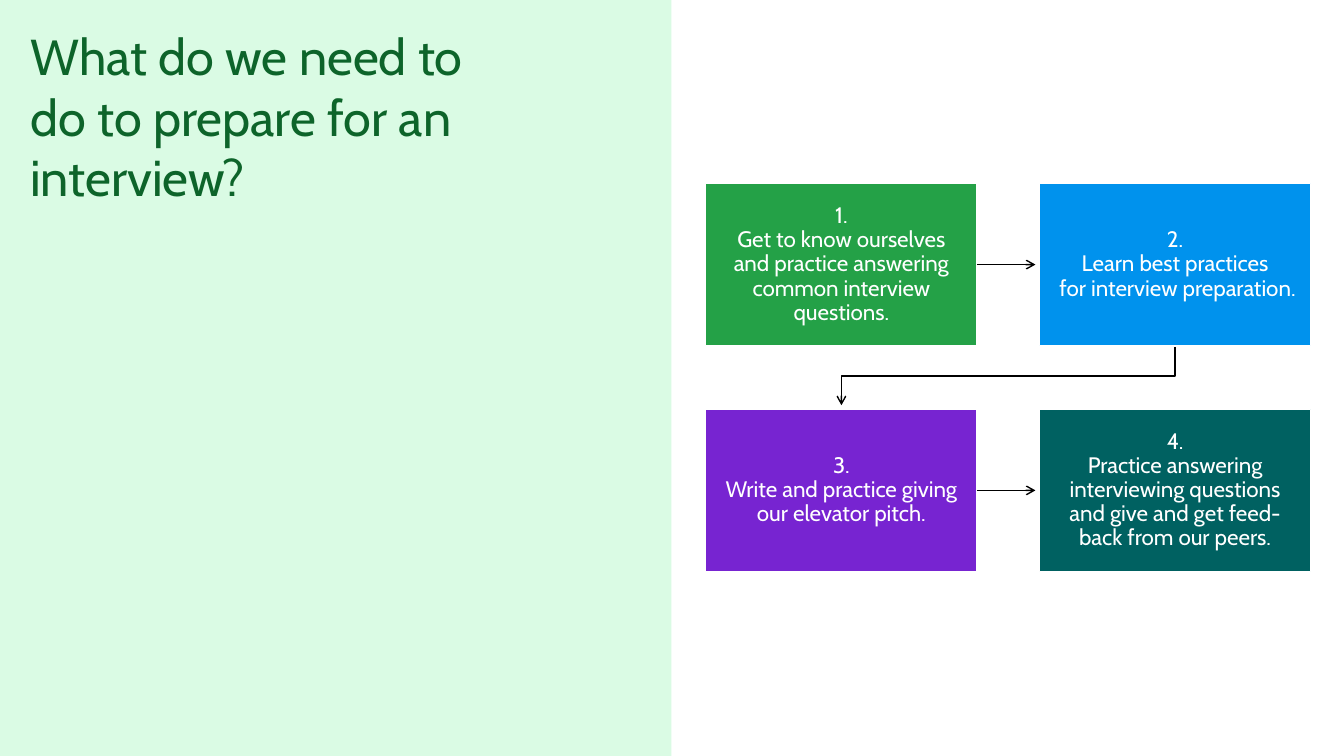
from dataclasses import dataclass

from lxml.etree import SubElement
from pptx import Presentation
from pptx.dml.color import RGBColor
from pptx.enum.shapes import MSO_CONNECTOR as Connector, MSO_SHAPE as Shape
from pptx.enum.text import MSO_ANCHOR as Anchor, MSO_AUTO_SIZE as AutoSize, PP_ALIGN as Align
from pptx.oxml.ns import qn
from pptx.util import Emu, Pt

EMU_PER_PX = 9144
SLIDE_WIDTH, SLIDE_HEIGHT = 1333, 750
PANEL_WIDTH = 666
STEP_WIDTH, STEP_HEIGHT = 269, 161
ARROW_LENGTH = 58
COLUMNS = 2


@dataclass(frozen=True)
class Theme:
    """Colours, font and type sizes of the slide."""
    font: str = "Cabin"
    title_size: int = 36
    step_size: int = 16
    panel: str = "DAFBE4"
    title: str = "0D642A"
    light: str = "FFFFFF"
    arrow: str = "000000"
    steps: tuple = ("24A147", "0092ED", "7724D1", "006161")


THEME = Theme()
TITLE = "What do we need to do to prepare for an interview?"
STEPS = (
    ("1.", "Get to know ourselves and practice answering common interview questions."),
    ("2.", "Learn best practices", " for interview preparation."),
    ("3.", "Write and practice giving our elevator pitch."),
    ("4.", "Practice answering interviewing questions and give and get feed-back from our peers."),
)


def px(*lengths):
    """Turn pixel lengths into EMU."""
    return [Emu(round(length * EMU_PER_PX)) for length in lengths]


def add_run(paragraph, text, size, color):
    """Add one formatted run to a paragraph."""
    run = paragraph.add_run()
    run.text = text
    run.font.name = THEME.font
    run.font.size = Pt(size)
    run.font.color.rgb = RGBColor.from_string(color)


def add_block(slide, box, color):
    """Add a flat filled rectangle."""
    block = slide.shapes.add_shape(Shape.RECTANGLE, *px(*box))
    block.shadow.inherit = False
    block.fill.solid()
    block.fill.fore_color.rgb = RGBColor.from_string(color)
    block.line.fill.background()
    return block


def add_title_panel(slide, box):
    """Place the tinted panel and the title inside it."""
    left, top, width, height = box
    panel = add_block(slide, box, THEME.panel)
    title = slide.shapes.title
    title.element.addprevious(panel.element)
    title.left, title.top, title.width, title.height = px(left + 20, top + 20, 482, 192)
    frame = title.text_frame
    frame.word_wrap = True
    frame.auto_size = AutoSize.NONE
    frame.vertical_anchor = Anchor.TOP
    paragraph = frame.paragraphs[0]
    paragraph.alignment = Align.LEFT
    add_run(paragraph, TITLE, THEME.title_size, THEME.title)


def add_step(slide, box, lines, color):
    """Place one coloured step with its centred lines."""
    step = add_block(slide, box, color)
    step.line.color.rgb = RGBColor.from_string(THEME.light)
    step.line.width = Pt(1)
    frame = step.text_frame
    frame.word_wrap = True
    frame.vertical_anchor = Anchor.MIDDLE
    frame.margin_left, frame.margin_right = px(13, 13)
    frame.margin_top, frame.margin_bottom = px(14, 14)
    paragraph = frame.paragraphs[0]
    paragraph.alignment = Align.CENTER
    paragraph.line_spacing = 0.9
    for index, line in enumerate(lines):
        if index:
            paragraph.add_line_break()
        add_run(paragraph, line, THEME.step_size, THEME.light)


def add_arrow(slide, kind, start, end):
    """Add a thin connector with an open arrowhead at its end."""
    arrow = slide.shapes.add_connector(kind, *px(*start, *end))
    arrow.line.color.rgb = RGBColor.from_string(THEME.arrow)
    arrow.line.width = Pt(1)
    SubElement(arrow.line._get_or_add_ln(), qn("a:tailEnd"), type="arrow")
    SubElement(arrow.element.spPr, qn("a:effectLst"))
    return arrow


def add_turn_arrow(slide, start, end):
    """Lead down, left and down again with a quarter-turned elbow."""
    center_x, center_y = (start[0] + end[0]) / 2, (start[1] + end[1]) / 2
    half_width, half_height = (end[1] - start[1]) / 2, (start[0] - end[0]) / 2
    arrow = add_arrow(slide, Connector.ELBOW,
                      (center_x - half_width, center_y - half_height),
                      (center_x + half_width, center_y + half_height))
    arrow.element.spPr.find(qn("a:xfrm")).set("rot", "5400000")


def add_process(slide, box):
    """Lay the steps out as a grid and join them in reading order."""
    left, top, width, height = box
    pitch_x, pitch_y = width - STEP_WIDTH, height - STEP_HEIGHT
    boxes = [(left + index % COLUMNS * pitch_x, top + index // COLUMNS * pitch_y,
              STEP_WIDTH, STEP_HEIGHT) for index in range(len(STEPS))]
    for step_box, lines, color in zip(boxes, STEPS, THEME.steps):
        add_step(slide, step_box, lines, color)
    for (x, y, *_), (next_x, next_y, *_) in zip(boxes, boxes[1:]):
        if y == next_y:
            start = (x + STEP_WIDTH, y + STEP_HEIGHT / 2)
            add_arrow(slide, Connector.STRAIGHT, start, (start[0] + ARROW_LENGTH, start[1]))
        else:
            start = (x + STEP_WIDTH / 2, y + STEP_HEIGHT + 1)
            add_turn_arrow(slide, start, (next_x + STEP_WIDTH / 2, start[1] + ARROW_LENGTH))


def main():
    """Build and save the slide."""
    presentation = Presentation()
    presentation.slide_width, presentation.slide_height = px(SLIDE_WIDTH, SLIDE_HEIGHT)
    slide = presentation.slides.add_slide(presentation.slide_layouts.get_by_name("Title Only"))
    add_title_panel(slide, (0, 0, PANEL_WIDTH, SLIDE_HEIGHT))
    add_process(slide, (700, 182, 600, 385))
    presentation.save("out.pptx")


if __name__ == "__main__":
    main()
